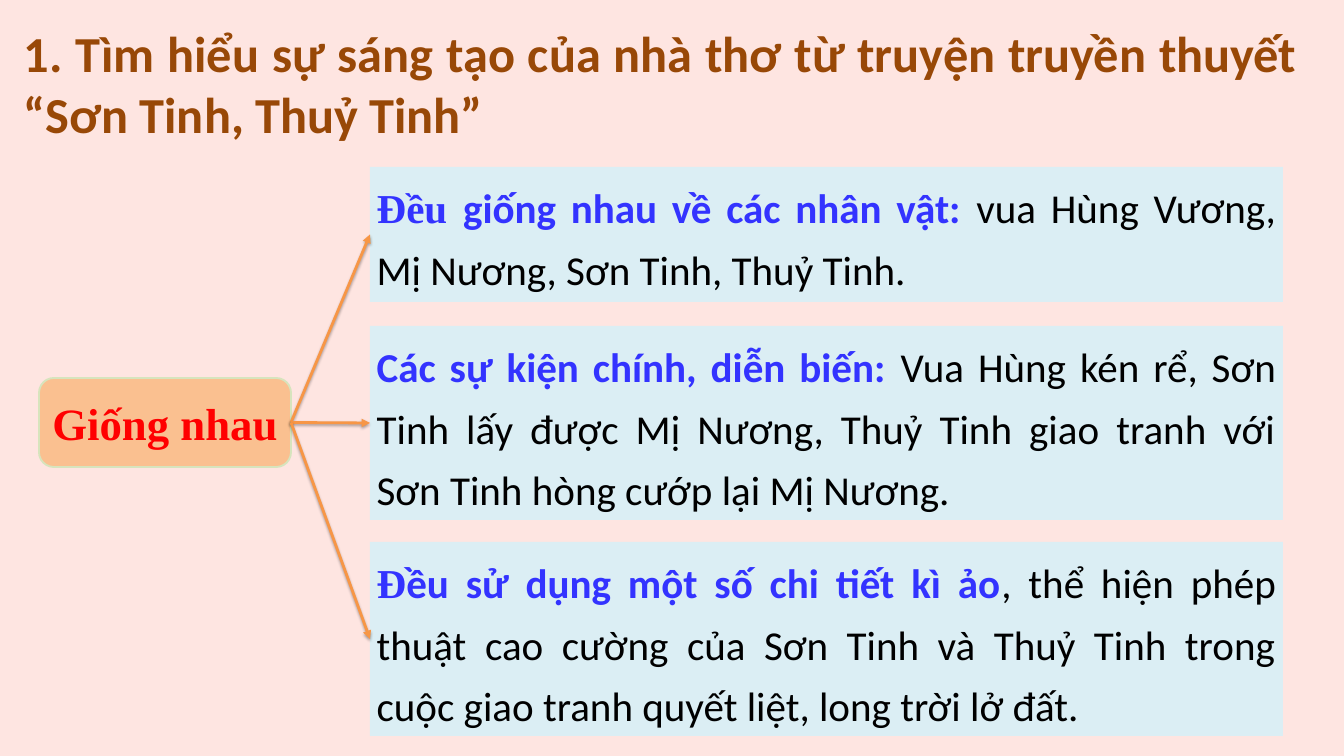
from typing import NamedTuple

from lxml.etree import SubElement
from pptx import Presentation
from pptx.dml.color import RGBColor
from pptx.enum.shapes import MSO_CONNECTOR, MSO_SHAPE
from pptx.enum.text import MSO_ANCHOR, MSO_AUTO_SIZE, PP_ALIGN
from pptx.oxml import parse_xml
from pptx.oxml.ns import nsdecls, qn
from pptx.util import Emu, Inches, Pt

PX = 914400 / 67.2

PINK = RGBColor(0xFE, 0xE5, 0xE1)
BROWN = RGBColor(0x98, 0x48, 0x07)
PEACH = RGBColor(0xFA, 0xC0, 0x90)
PALE_GREEN = RGBColor(0xD7, 0xE4, 0xBD)
RED = RGBColor(0xFF, 0x00, 0x00)
PALE_BLUE = RGBColor(0xDB, 0xEE, 0xF4)
BLUE = RGBColor(0x33, 0x33, 0xFF)
BLACK = RGBColor(0x00, 0x00, 0x00)
ORANGE = RGBColor(0xF7, 0x96, 0x46)

SANS = "Calibri"
SERIF = "Times New Roman"

BOX_LEFT, BOX_WIDTH = 370, 913
RIGHT_SITE, LEFT_SITE = 3, 1

ARROW_SHADOW = (
    f'<a:effectLst {nsdecls("a")}>'
    '<a:outerShdw blurRad="40000" dist="23000" dir="5400000" rotWithShape="0">'
    '<a:srgbClr val="000000"><a:alpha val="35000"/></a:srgbClr>'
    "</a:outerShdw></a:effectLst>"
)


class Span(NamedTuple):
    text: str
    font: str = SANS
    color: RGBColor = BLUE
    bold: bool = True


class Similarity(NamedTuple):
    top: int
    height: int
    spans: list[Span]


SIMILARITIES = [
    Similarity(167, 135, [
        Span("Đều ", SERIF),
        Span("giống nhau về các nhân vật: "),
        Span("vua Hùng Vương, Mị Nương, Sơn Tinh, Thuỷ Tinh.", color=BLACK, bold=False),
    ]),
    Similarity(326, 194, [
        Span("Các sự kiện chính, diễn biến: "),
        Span("Vua Hùng kén rể, Sơn Tinh lấy được Mị Nương, Thuỷ Tinh giao tranh "
             "với Sơn Tinh hòng cướp lại Mị Nương.", color=BLACK, bold=False),
    ]),
    Similarity(542, 194, [
        Span("Đ", SERIF),
        Span("ều sử dụng một số chi tiết kì ảo"),
        Span(", thể hiện phép thuật cao cường của Sơn Tinh và Thuỷ Tinh trong "
             "cuộc giao tranh quyết liệt, long trời lở đất.", color=BLACK, bold=False),
    ]),
]


def px(length: int) -> Emu:
    return Emu(round(length * PX))


def place(shape, left: int, top: int, width: int, height: int) -> None:
    shape.left, shape.top = px(left), px(top)
    shape.width, shape.height = px(width), px(height)


def write(paragraph, spans: list[Span], size: int, align: PP_ALIGN) -> None:
    paragraph.alignment = align
    for span in spans:
        run = paragraph.add_run()
        run.text = span.text
        run.font.name = span.font
        run.font.size = Pt(size)
        run.font.bold = span.bold
        run.font.color.rgb = span.color


def add_panel(page, kind: MSO_SHAPE, left: int, top: int, width: int, height: int,
              fill: RGBColor):
    panel = page.shapes.add_shape(kind, px(left), px(top), px(width), px(height))
    panel.shadow.inherit = False
    panel.fill.solid()
    panel.fill.fore_color.rgb = fill
    panel.line.fill.background()
    panel.text_frame.word_wrap = True
    return panel


def add_title(page, text: str) -> None:
    title = page.shapes.title
    place(title, 17, 19, 1288, 129)
    frame = title.text_frame
    frame.word_wrap = True
    frame.auto_size = MSO_AUTO_SIZE.SHAPE_TO_FIT_TEXT
    frame.vertical_anchor = MSO_ANCHOR.TOP
    write(frame.paragraphs[0], [Span(text, color=BROWN)], 54, PP_ALIGN.JUSTIFY)


def add_label(page, text: str):
    label = add_panel(page, MSO_SHAPE.ROUNDED_RECTANGLE, 39, 378, 252, 89, PEACH)
    label.line.color.rgb = PALE_GREEN
    label.line.width = Pt(2)
    frame = label.text_frame
    frame.margin_left = frame.margin_right = 0
    frame.vertical_anchor = MSO_ANCHOR.MIDDLE
    write(frame.paragraphs[0], [Span(text, SERIF, RED)], 48, PP_ALIGN.CENTER)
    return label


def add_similarity(page, item: Similarity):
    box = add_panel(page, MSO_SHAPE.RECTANGLE, BOX_LEFT, item.top, BOX_WIDTH,
                    item.height, PALE_BLUE)
    frame = box.text_frame
    frame.auto_size = MSO_AUTO_SIZE.SHAPE_TO_FIT_TEXT
    frame.vertical_anchor = MSO_ANCHOR.TOP
    frame.paragraphs[0].line_spacing = 1.25
    write(frame.paragraphs[0], item.spans, 44, PP_ALIGN.JUSTIFY)
    return box


def add_arrow(page, source, target) -> None:
    arrow = page.shapes.add_connector(MSO_CONNECTOR.STRAIGHT, 0, 0, 0, 0)
    arrow.begin_connect(source, RIGHT_SITE)
    arrow.end_connect(target, LEFT_SITE)
    arrow.line.color.rgb = ORANGE
    arrow.line.width = Pt(3)
    properties = arrow.element.spPr
    SubElement(properties.find(qn("a:ln")), qn("a:tailEnd"), type="triangle")
    properties.append(parse_xml(ARROW_SHADOW))


def main() -> None:
    deck = Presentation()
    deck.slide_width, deck.slide_height = Inches(20), Inches(11.25)
    page = deck.slides.add_slide(deck.slide_layouts.get_by_name("Title Only"))
    page.background.fill.solid()
    page.background.fill.fore_color.rgb = PINK

    # Heading
    add_title(page, "1. Tìm hiểu sự sáng tạo của nhà thơ từ truyện truyền thuyết "
                    "“Sơn Tinh, Thuỷ Tinh”")

    # Label with one arrow to each similarity
    label = add_label(page, "Giống nhau")
    boxes = [add_similarity(page, item) for item in SIMILARITIES]
    for box in boxes:
        add_arrow(page, label, box)

    deck.save("out.pptx")


if __name__ == "__main__":
    main()
